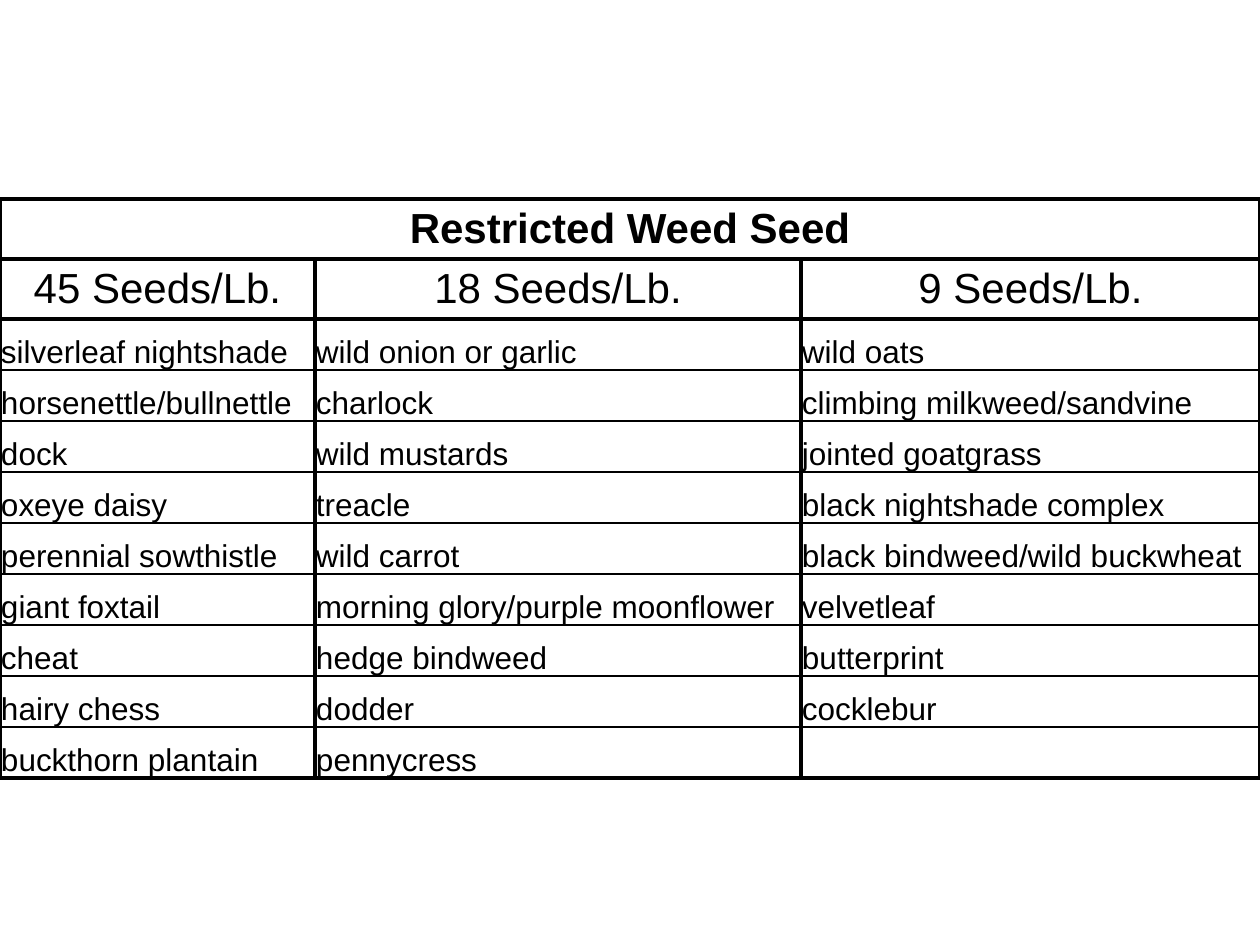
from lxml.etree import SubElement
from pptx import Presentation
from pptx.dml.color import RGBColor
from pptx.enum.text import MSO_ANCHOR, PP_ALIGN
from pptx.oxml import parse_xml
from pptx.oxml.ns import nsdecls
from pptx.util import Emu, Pt

# Content
TITLE = "Restricted Weed Seed"
HEADS = ["45 Seeds/Lb.", "18 Seeds/Lb.", "9 Seeds/Lb."]
WEEDS = [
    ("silverleaf nightshade", "wild onion or garlic", "wild oats"),
    ("horsenettle/bullnettle", "charlock", "climbing milkweed/sandvine"),
    ("dock", "wild mustards", "jointed goatgrass"),
    ("oxeye daisy", "treacle", "black nightshade complex"),
    ("perennial sowthistle", "wild carrot", "black bindweed/wild buckwheat"),
    ("giant foxtail", "morning glory/purple moonflower", "velvetleaf"),
    ("cheat", "hedge bindweed", "butterprint"),
    ("hairy chess", "dodder", "cocklebur"),
    ("buckthorn plantain", "pennycress", ""),
]

# Look
THEME = {"font": "Arial", "ink": "000000", "head": 24, "body": 18,
         "thick": 2.25, "thin": 1}

# Layout in px, 126 to the inch
WIDE, HIGH, TOP = 1260, 945, 199
COLS = [315, 486, 459]
ROWS = [60, 60] + [51] * len(WEEDS)


def px(n):
    return Emu(round(n * 914400 / 126))


def write(cell, text, size=THEME["body"], bold=False, align=PP_ALIGN.LEFT):
    para = cell.text_frame.paragraphs[0]
    para.alignment = align
    font = para.font
    if text:
        run = para.add_run()
        run.text = text
        font = run.font
    font.size = Pt(size)
    font.bold = bold
    font.name = THEME["font"]
    font.color.rgb = RGBColor.from_string(THEME["ink"])


def frame(cell, top, bottom):
    """Rule all four sides; left and right are always thick."""
    props = cell._tc.get_or_add_tcPr()
    sides = {"L": THEME["thick"], "R": THEME["thick"], "T": top, "B": bottom}
    for spot, (side, width) in enumerate(sides.items()):
        props.insert(spot, parse_xml(
            f'<a:ln{side} {nsdecls("a")} w="{Pt(width)}"><a:solidFill>'
            f'<a:srgbClr val="{THEME["ink"]}"/></a:solidFill></a:ln{side}>'))


def build():
    deck = Presentation()
    deck.slide_width, deck.slide_height = px(WIDE), px(HIGH)
    slide = deck.slides.add_slide(deck.slide_layouts[6])

    # Table grid
    grid = slide.shapes.add_table(len(ROWS), len(COLS), 0, px(TOP),
                                  px(WIDE), px(sum(ROWS))).table
    grid.first_row = grid.horz_banding = False
    for col, width in zip(grid.columns, COLS):
        col.width = px(width)
    for row, height in zip(grid.rows, ROWS):
        row.height = px(height)

    # Title and column heads
    grid.cell(0, 0).merge(grid.cell(0, len(COLS) - 1))
    write(grid.cell(0, 0), TITLE, size=THEME["head"], bold=True,
          align=PP_ALIGN.CENTER)
    for c, head in enumerate(HEADS):
        write(grid.cell(1, c), head, size=THEME["head"],
              align=PP_ALIGN.CENTER)

    # Weed names
    for r, names in enumerate(WEEDS, 2):
        for c, name in enumerate(names):
            cell = grid.cell(r, c)
            cell.vertical_anchor = MSO_ANCHOR.BOTTOM
            cell.margin_left = cell.margin_right = cell.margin_top = px(1)
            cell.margin_bottom = 0
            write(cell, name)

    # Rules: thin only between weed rows
    last = len(ROWS) - 1
    for r in range(len(ROWS)):
        top = THEME["thick"] if r <= 2 else THEME["thin"]
        bottom = THEME["thick"] if r < 2 or r == last else THEME["thin"]
        for c in range(len(COLS)):
            cell = grid.cell(r, c)
            cell.fill.background()
            frame(cell, top, bottom)

    deck.save("out.pptx")


if __name__ == "__main__":
    build()
